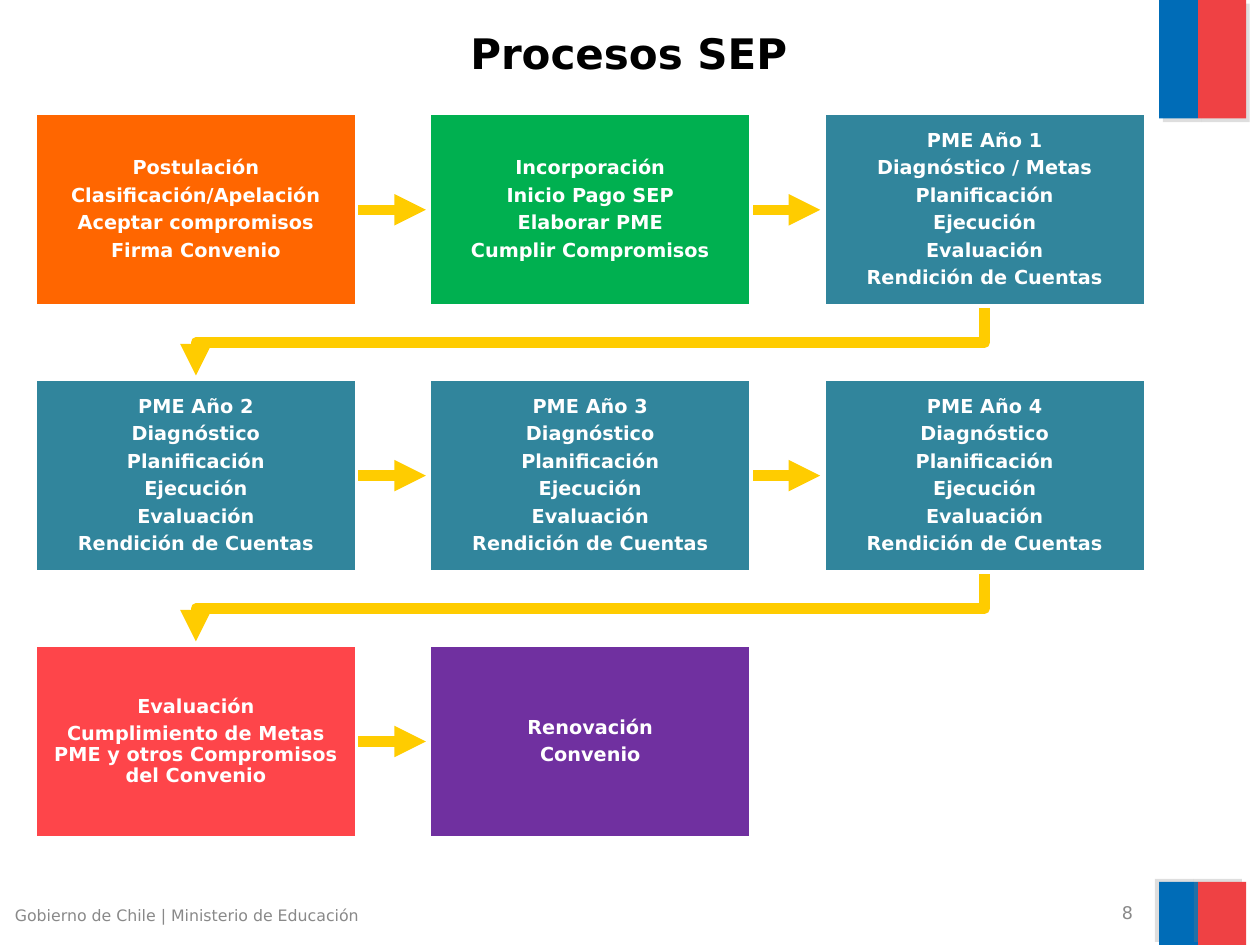
from dataclasses import dataclass

from lxml import etree
from pptx import Presentation
from pptx.dml.color import RGBColor
from pptx.enum.shapes import MSO_CONNECTOR, MSO_SHAPE
from pptx.enum.text import MSO_ANCHOR, PP_ALIGN
from pptx.oxml.ns import qn
from pptx.util import Inches, Pt

RECTANGLE = MSO_SHAPE.RECTANGLE
STRAIGHT = MSO_CONNECTOR.STRAIGHT
TOP, MIDDLE = MSO_ANCHOR.TOP, MSO_ANCHOR.MIDDLE
LEFT, CENTER, RIGHT = PP_ALIGN.LEFT, PP_ALIGN.CENTER, PP_ALIGN.RIGHT


@dataclass(frozen=True)
class Theme:
    font: str = "DejaVu Sans"
    title_size: float = 24
    box_size: float = 11
    number_size: float = 10
    footer_size: float = 9
    black: str = "000000"
    white: str = "FFFFFF"
    gray: str = "898989"
    shadow: str = "808080"
    arrow: str = "FFCC00"
    orange: str = "FF6600"
    green: str = "00B050"
    teal: str = "31859C"
    coral: str = "FE454A"
    purple: str = "7030A0"
    flag_blue: str = "006CB7"
    flag_red: str = "EF4144"


THEME = Theme()

TITLE = "Procesos SEP"
FOOTER = "Gobierno de Chile | Ministerio de Educación"
SLIDE_NUMBER = "8"
YEAR_END = ["Planificación", "Ejecución", "Evaluación", "Rendición de Cuentas"]
STEPS = [
    (THEME.orange, ["Postulación", "Clasificación/Apelación",
                    "Aceptar compromisos", "Firma Convenio"]),
    (THEME.green, ["Incorporación", "Inicio Pago SEP",
                   "Elaborar PME", "Cumplir Compromisos"]),
    (THEME.teal, ["PME Año 1", "Diagnóstico / Metas", *YEAR_END]),
    *[(THEME.teal, [f"PME Año {year}", "Diagnóstico", *YEAR_END])
      for year in (2, 3, 4)],
    (THEME.coral, ["Evaluación",
                   "Cumplimiento de Metas PME y otros Compromisos del Convenio"]),
    (THEME.purple, ["Renovación", "Convenio"]),
]

# Flag bands: top, height, shadow direction in degrees
FLAGS = [(0, 0.94, 45), (7, 0.5, 215)]
# Flag stripes: left, width, colour
STRIPES = [(9.2, 0.31, THEME.flag_blue), (9.51, 0.38, THEME.flag_red)]

COLUMNS = 3
GRID_LEFT, GRID_TOP = 0.28, 0.9
BOX_WIDTH, BOX_HEIGHT = 2.55, 1.53
COLUMN_PITCH, ROW_PITCH = 3.13, 2.11
ARROW_GAP = 0.03
BEND_DROP = 0.29


def color(value):
    return RGBColor.from_string(value)


def style_text(frame, lines, size, text_color, align, anchor, bold=False):
    frame.word_wrap = True
    frame.vertical_anchor = anchor
    frame.text = "\n".join(lines)
    for paragraph in frame.paragraphs:
        paragraph.alignment = align
        font = paragraph.font
        font.name, font.size, font.bold = THEME.font, Pt(size), bold
        font.color.rgb = color(text_color)


def add_label(slide, text, bounds, size, align, anchor):
    box = slide.shapes.add_textbox(*map(Inches, bounds))
    style_text(box.text_frame, [text], size, THEME.gray, align, anchor)


def add_rectangle(slide, bounds, fill):
    shape = slide.shapes.add_shape(RECTANGLE, *map(Inches, bounds))
    shape.shadow.inherit = False
    shape.fill.solid()
    shape.fill.fore_color.rgb = color(fill)
    shape.line.fill.background()
    return shape


def add_offset_shadow(shape, degrees):
    effects = shape._element.spPr.find(qn("a:effectLst"))
    shadow = etree.SubElement(effects, qn("a:outerShdw"), blurRad="0",
                              dist=str(Pt(3)), dir=str(degrees * 60000),
                              algn="ctr", rotWithShape="0")
    tone = etree.SubElement(shadow, qn("a:srgbClr"), val=THEME.shadow)
    etree.SubElement(tone, qn("a:alpha"), val="25000")


def style_arrow(arrow):
    arrow.line.color.rgb = color(THEME.arrow)
    arrow.line.width = Pt(6)
    etree.SubElement(arrow.line._get_or_add_ln(), qn("a:tailEnd"), type="triangle")


def add_next_arrow(slide, left, top):
    """Arrow from a box to its right-hand neighbour."""
    start = left + BOX_WIDTH
    end = left + COLUMN_PITCH - ARROW_GAP
    middle = top + BOX_HEIGHT / 2
    arrow = slide.shapes.add_connector(
        STRAIGHT, *map(Inches, (start, middle, end, middle)))
    etree.SubElement(arrow._element.spPr, qn("a:effectLst"))
    style_arrow(arrow)


def add_return_arrow(slide, left, top):
    """Bent arrow from the last box of a row to the first of the next row."""
    start_x, end_x = left + BOX_WIDTH / 2, GRID_LEFT + BOX_WIDTH / 2
    start_y = top + BOX_HEIGHT
    bend_y = start_y + BEND_DROP
    end_y = top + ROW_PITCH - ARROW_GAP
    points = [(start_x, bend_y), (end_x, bend_y), (end_x, end_y)]
    builder = slide.shapes.build_freeform(Inches(start_x), Inches(start_y))
    builder.add_line_segments([(Inches(x), Inches(y)) for x, y in points], close=False)
    arrow = builder.convert_to_shape()
    arrow.shadow.inherit = False
    arrow.fill.background()
    style_arrow(arrow)


def add_step(slide, left, top, fill, lines):
    box = add_rectangle(slide, (left, top, BOX_WIDTH, BOX_HEIGHT), fill)
    box.line.color.rgb = color(THEME.white)
    box.line.width = Pt(2)
    frame = box.text_frame
    frame.margin_left = frame.margin_right = Inches(0.09)
    frame.margin_top = frame.margin_bottom = Inches(0.09)
    style_text(frame, lines, THEME.box_size, THEME.white, CENTER, MIDDLE, bold=True)
    for paragraph in frame.paragraphs:
        paragraph.line_spacing = 0.9
        paragraph.space_after = Pt(0.35 * THEME.box_size)


def add_process(slide):
    for index, (fill, lines) in enumerate(STEPS):
        row, column = divmod(index, COLUMNS)
        left = GRID_LEFT + column * COLUMN_PITCH
        top = GRID_TOP + row * ROW_PITCH
        if index < len(STEPS) - 1:
            add_arrow = add_return_arrow if column == COLUMNS - 1 else add_next_arrow
            add_arrow(slide, left, top)
        add_step(slide, left, top, fill, lines)


def add_flags(slide):
    for top, height, degrees in FLAGS:
        for left, width, fill in STRIPES:
            stripe = add_rectangle(slide, (left, top, width, height), fill)
            add_offset_shadow(stripe, degrees)


def main():
    presentation = Presentation()
    presentation.slide_width, presentation.slide_height = Inches(10), Inches(7.5)
    title_only = presentation.slide_layouts[5]
    slide = presentation.slides.add_slide(title_only)

    title = slide.shapes.title
    title.left, title.top, title.width, title.height = map(Inches, (0, 0, 9.98, 0.84))
    style_text(title.text_frame, [TITLE], THEME.title_size, THEME.black,
               CENTER, MIDDLE, bold=True)

    add_flags(slide)
    add_label(slide, SLIDE_NUMBER, (6.76, 7.14, 2.33, 0.21),
              THEME.number_size, RIGHT, MIDDLE)
    add_label(slide, FOOTER, (0.02, 7.14, 3.17, 0.27), THEME.footer_size, LEFT, TOP)
    add_process(slide)
    presentation.save("out.pptx")


if __name__ == "__main__":
    main()
